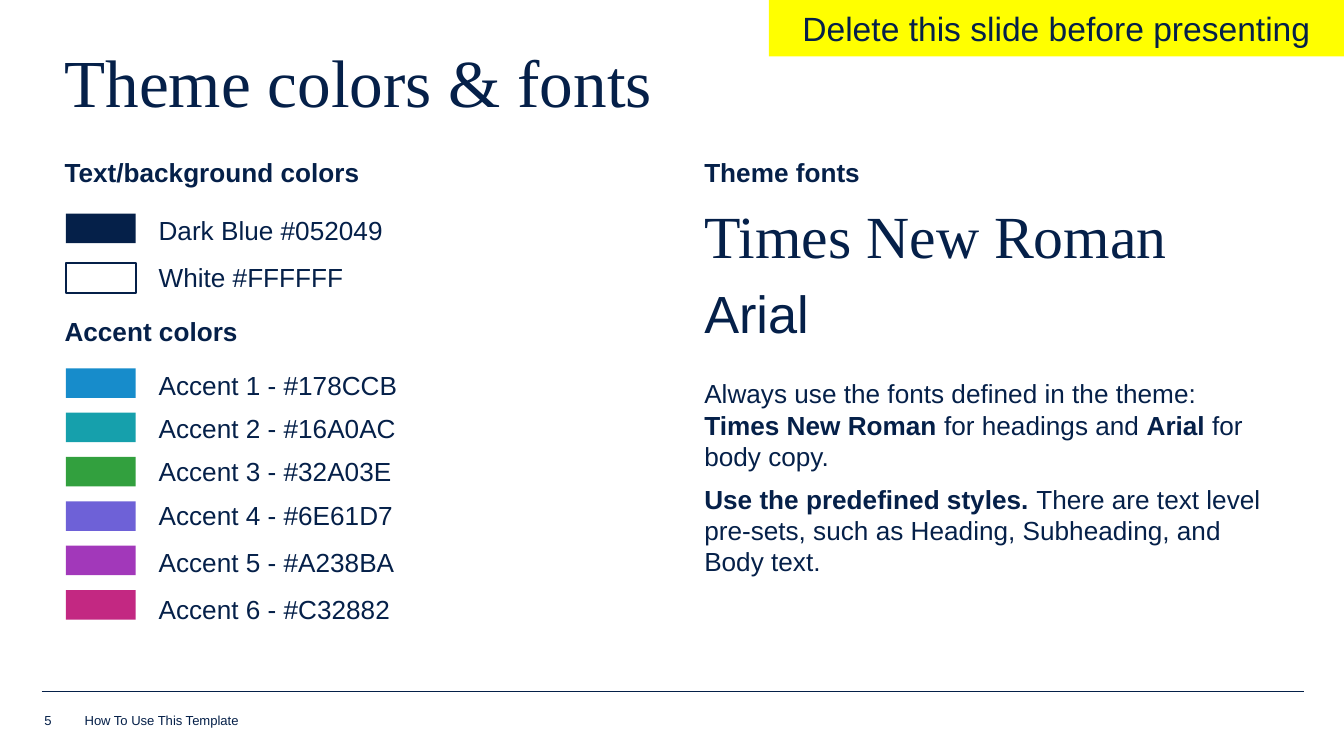
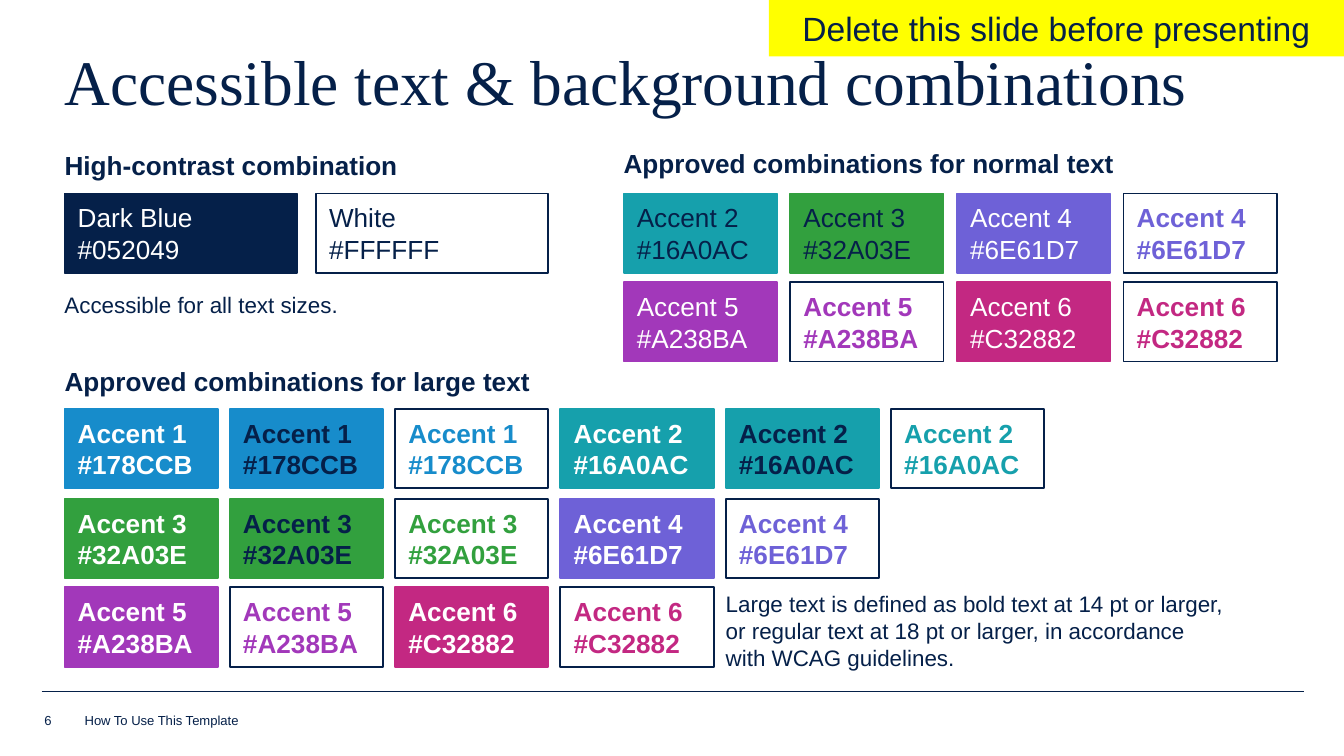
import pptx
import pptx.util
import pptx.dml.color
import pptx.enum.shapes
import pptx.enum.text
import pptx.oxml.ns
import lxml.etree

Inches = pptx.util.Inches
Pt = pptx.util.Pt
RGB = pptx.dml.color.RGBColor.from_string
qn = pptx.oxml.ns.qn
Anchor = pptx.enum.text.MSO_ANCHOR
Align = pptx.enum.text.PP_ALIGN
Shape = pptx.enum.shapes.MSO_SHAPE

hues = {
    "navy": "052049",
    "white": "FFFFFF",
    "yellow": "FFFF00",
    "1": "178CCB",
    "2": "16A0AC",
    "3": "32A03E",
    "4": "6E61D7",
    "5": "A238BA",
    "6": "C32882",
}
pad = (0, 0.05, 0.1, 0.05)
inner = (0.1, 0.05, 0.1, 0.05)


def put(shape, lines, size=14, hue="navy", face="Arial", after=6, inset=pad,
        anchor=Anchor.TOP, align=Align.LEFT, wrap=True):
    frame = shape.text_frame
    frame.auto_size = pptx.enum.text.MSO_AUTO_SIZE.NONE
    frame.word_wrap = wrap
    frame.vertical_anchor = anchor
    frame.margin_left, frame.margin_top, frame.margin_right, frame.margin_bottom = map(Inches, inset)
    for n, line in enumerate(lines):
        para = frame.add_paragraph() if n else frame.paragraphs[0]
        props = para._p.get_or_add_pPr()
        props.set("marL", "0")
        props.set("indent", "0")
        lxml.etree.SubElement(props, qn("a:buNone"))
        para.alignment = align
        para.space_before = Pt(0)
        para.space_after = Pt(after)
        para.line_spacing = 1.0
        for i, part in enumerate(line.split("|")):
            if part:
                run = para.add_run()
                run.text = part
                run.font.name = face
                run.font.size = Pt(size)
                run.font.bold = i % 2 == 1
                run.font.color.rgb = RGB(hues[hue])
    return frame.paragraphs


def box(slide, kind, place, fill, edge=None):
    shape = slide.shapes.add_shape(kind, *map(Inches, place))
    shape.shadow.inherit = False
    shape.fill.solid()
    shape.fill.fore_color.rgb = RGB(hues[fill])
    if edge:
        shape.line.color.rgb = RGB(hues[edge])
        shape.line.width = Pt(1)
    else:
        shape.line.fill.background()
    return shape


deck = pptx.Presentation()
deck.slide_width = Inches(10)
deck.slide_height = deck.slide_width * 9 // 16

theme = deck.slides.add_slide(deck.slide_layouts[3])
combos = deck.slides.add_slide(deck.slide_layouts[1])

heads = [
    (theme, "Theme colors & fonts", 36, 0.34, 0.46),
    (combos, "Accessible text & background combinations", 34, 0.35, 0.5),
]
for slide, text, size, top, high in heads:
    title = slide.shapes.title
    title.left, title.top, title.width, title.height = map(Inches, (0.48, top, 8.94, high))
    put(title, [text], size, face="Times New Roman", after=0)[0].line_spacing = 0.85

bodies = [
    (theme.placeholders[1], (0.48, 1.11, 4.28, 3.7)),
    (theme.placeholders[2], (5.24, 1.11, 4.34, 3.27)),
    (combos.placeholders[1], (0.48, 1.06, 2.67, 0.37)),
]
for body, place in bodies:
    body.left, body.top, body.width, body.height = map(Inches, place)

names = ["|Text/background colors|", "Dark Blue #052049", "White #FFFFFF", "|Accent colors|"]
names += [f"Accent {n} - #{hues[n]}" for n in "123456"]
paras = put(bodies[0][0], names)
for para, name in zip(paras, names):
    if "#" in name:
        para.line_spacing = 1.14
        para._p.get_or_add_pPr().set("marL", str(Inches(0.7)))
for i, gap in ((1, 6), (3, 6), (4, 4)):
    paras[i].space_before = Pt(gap)
for para in paras[4:7]:
    para.space_after = Pt(4)

box(theme, Shape.RECTANGLE, (0.49, 1.59, 0.52, 0.22), "navy")
box(theme, Shape.RECTANGLE, (0.49, 1.96, 0.52, 0.22), "white", "navy")
for i, hue in enumerate("123456"):
    box(theme, Shape.RECTANGLE, (0.49, 2.74 + 0.33 * i, 0.52, 0.22), hue)

paras = put(bodies[1][0], [
    "|Theme fonts|",
    "Times New Roman",
    "Arial",
    "Always use the fonts defined in the theme: |Times New Roman |for headings and |Arial| for body copy.",
    "|Use the predefined styles. |There are text level pre-sets, such as Heading, Subheading, and Body text.",
])
paras[1].runs[0].font.name = "Times New Roman"
paras[1].runs[0].font.size = Pt(32)
paras[2].runs[0].font.size = Pt(28)
paras[2].space_after = Pt(18)

put(bodies[2][0], ["|High-contrast combination|"])
notes = [
    ((0.48, 2.12, 3.6, 0.37), "Accessible for all text sizes.", 12),
    ((4.64, 1.05, 3.84, 0.37), "|Approved combinations for normal text|", 14),
    ((0.48, 2.67, 4.52, 0.37), "|Approved combinations for large text|", 14),
    ((5.4, 4.34, 3.84, 0.59), "Large text is defined as bold text at 14 pt or larger, "
     "or regular text at 18 pt or larger, in accordance with WCAG guidelines.", 12),
]
for place, text, size in notes:
    put(combos.shapes.add_textbox(*map(Inches, place)), [text], size)

tiles = [
    (0.48, 1.44, 1.73, "Dark Blue", "navy", "navy", "white", False),
    (2.35, 1.44, 1.73, "White", "white", "navy", "navy", False),
]
grids = [
    (4.64, 1.44, 1.24, "2n 3n 4w 4o", False),
    (4.64, 2.1, 1.24, "5w 5o 6w 6o", False),
    (0.48, 3.04, 1.23, "1w 1n 1o 2w 2n 2o", True),
    (0.48, 3.71, 1.23, "3w 3n 3o 4w 4o", True),
    (0.48, 4.37, 1.23, "5w 5o 6w 6o", True),
]
for left, top, step, codes, large in grids:
    for i, (hue, mode) in enumerate(codes.split()):
        fill, edge, ink = {
            "w": (hue, hue, "white"),
            "n": (hue, hue, "navy"),
            "o": ("white", "navy", hue),
        }[mode]
        tiles.append((left + step * i, top, 1.14, f"Accent {hue}", fill, edge, ink, large or mode == "o"))

for left, top, wide, name, fill, edge, ink, bold in tiles:
    tile = box(combos, Shape.ROUNDED_RECTANGLE, (left, top, wide, 0.59), fill, edge)
    tile.adjustments[0] = 0
    code = hues[ink if name.startswith("Accent") and fill == "white" else fill]
    mark = "|" if bold else ""
    put(tile, [f"{mark}{text}{mark}" for text in (name, f"#{code}")], hue=ink, after=0,
        inset=inner, anchor=Anchor.MIDDLE, wrap=False)

for page, slide in enumerate((theme, combos), 5):
    rule = slide.shapes.add_connector(pptx.enum.shapes.MSO_CONNECTOR.STRAIGHT,
                                      *map(Inches, (0.31, 5.14, 9.7, 5.14)))
    rule.line.color.rgb = RGB(hues["navy"])
    rule.line.width = Pt(0.25)
    lxml.etree.SubElement(rule._element.spPr, qn("a:effectLst"))
    for left, wide, text in ((0.33, 0.27, str(page)), (0.63, 4.71, "How To Use This Template")):
        foot = slide.shapes.add_textbox(*map(Inches, (left, 5.31, wide, 0.11)))
        put(foot, [text], 7, after=0, inset=(0, 0, 0, 0), anchor=Anchor.BOTTOM)
    flag = box(slide, Shape.RECTANGLE, (5.72, 0, 4.28, 0.42), "yellow")
    put(flag, ["Delete this slide before presenting"], 18, inset=inner,
        anchor=Anchor.MIDDLE, align=Align.CENTER)

deck.save("out.pptx")
